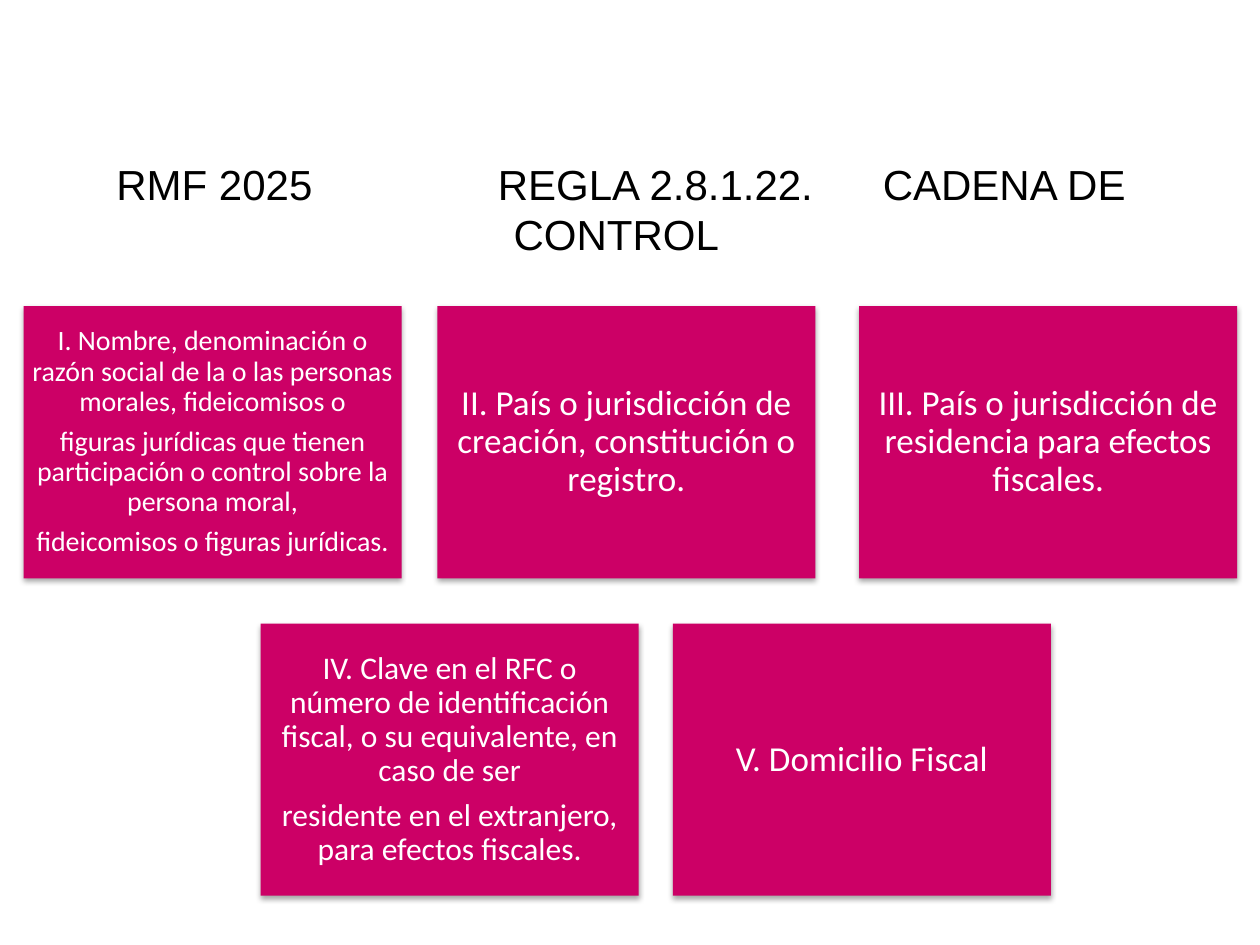
from lxml.etree import SubElement
from pptx import Presentation
from pptx.dml.color import RGBColor
from pptx.enum.shapes import MSO_SHAPE
from pptx.enum.text import MSO_ANCHOR, PP_ALIGN
from pptx.oxml import parse_xml
from pptx.oxml.ns import nsdecls, qn
from pptx.util import Pt


def paint(color, value):
    color.rgb = RGBColor.from_string(value)


def write(frame, text, size=20, font="Calibri", color="FFFFFF",
          align=PP_ALIGN.CENTER, spacing=0.9, after=0, stops=()):
    """Fill the empty first paragraph, or add one; stops are tab places in points."""
    para = frame.paragraphs[0]
    if para.runs:
        para = frame.add_paragraph()
    para.alignment = align
    para.line_spacing = spacing
    para.space_after = Pt(after)
    if stops:
        tabs = SubElement(para._p.get_or_add_pPr(), qn("a:tabLst"))
        for stop in stops:
            SubElement(tabs, qn("a:tab"), pos=str(Pt(stop)), algn="l")
    run = para.add_run()
    run.text = text
    run.font.size = Pt(size)
    run.font.name = font
    paint(run.font.color, color)


SHADOW = f"""<a:effectLst {nsdecls("a")}>
  <a:outerShdw blurRad="{Pt(3.1)}" dist="{Pt(1.8)}" dir="5400000" rotWithShape="0">
    <a:srgbClr val="000000"><a:alpha val="35000"/></a:srgbClr>
  </a:outerShdw>
</a:effectLst>"""

deck = Presentation()
deck.slide_width, deck.slide_height = Pt(720), Pt(540)
slide = deck.slides.add_slide(deck.slide_layouts[6])

# Cards: left, top, text size, paragraphs
UPPER, LOWER = 175, 356.4
WIDTH, HEIGHT = 216, 155.5
cards = [
    (13.5, UPPER, 16, [
        "I. Nombre, denominación o razón social de la o las personas morales, fideicomisos o",
        "figuras jurídicas que tienen participación o control sobre la persona moral,",
        "fideicomisos o figuras jurídicas."]),
    (250, UPPER, 20, ["II. País o jurisdicción de creación, constitución o registro."]),
    (491, UPPER, 20, ["III. País o jurisdicción de residencia para efectos fiscales."]),
    (149, LOWER, 18, [
        "IV. Clave en el RFC o número de identificación fiscal, o su equivalente, en caso de ser",
        "residente en el extranjero, para efectos fiscales."]),
    (384.5, LOWER, 20, ["V. Domicilio Fiscal"]),
]
for left, top, size, lines in cards:
    card = slide.shapes.add_shape(
        MSO_SHAPE.RECTANGLE, Pt(left), Pt(top), Pt(WIDTH), Pt(HEIGHT))
    card.fill.solid()
    paint(card.fill.fore_color, "CC0066")
    card.line.fill.background()
    card._element.spPr.append(parse_xml(SHADOW))
    frame = card.text_frame
    frame.word_wrap = True
    frame.vertical_anchor = MSO_ANCHOR.MIDDLE
    frame.margin_left = frame.margin_right = Pt(5)
    frame.margin_top = frame.margin_bottom = Pt(5)
    for line in lines:
        write(frame, line, size=size, after=0.35 * size)

# Title: its parts stand at tab stops
title = slide.shapes.add_textbox(Pt(13.5), Pt(87), Pt(684), Pt(65)).text_frame
title.word_wrap = True
title.margin_left = Pt(53)
for line, stops in [
    ("RMF 2025\tREGLA 2.8.1.22.\tCADENA DE", (218, 438)),
    ("\tCONTROL", (227,)),
]:
    write(title, line, size=24, font="Arial", color="000000",
          align=PP_ALIGN.LEFT, spacing=1.0, stops=stops)

deck.save("out.pptx")
